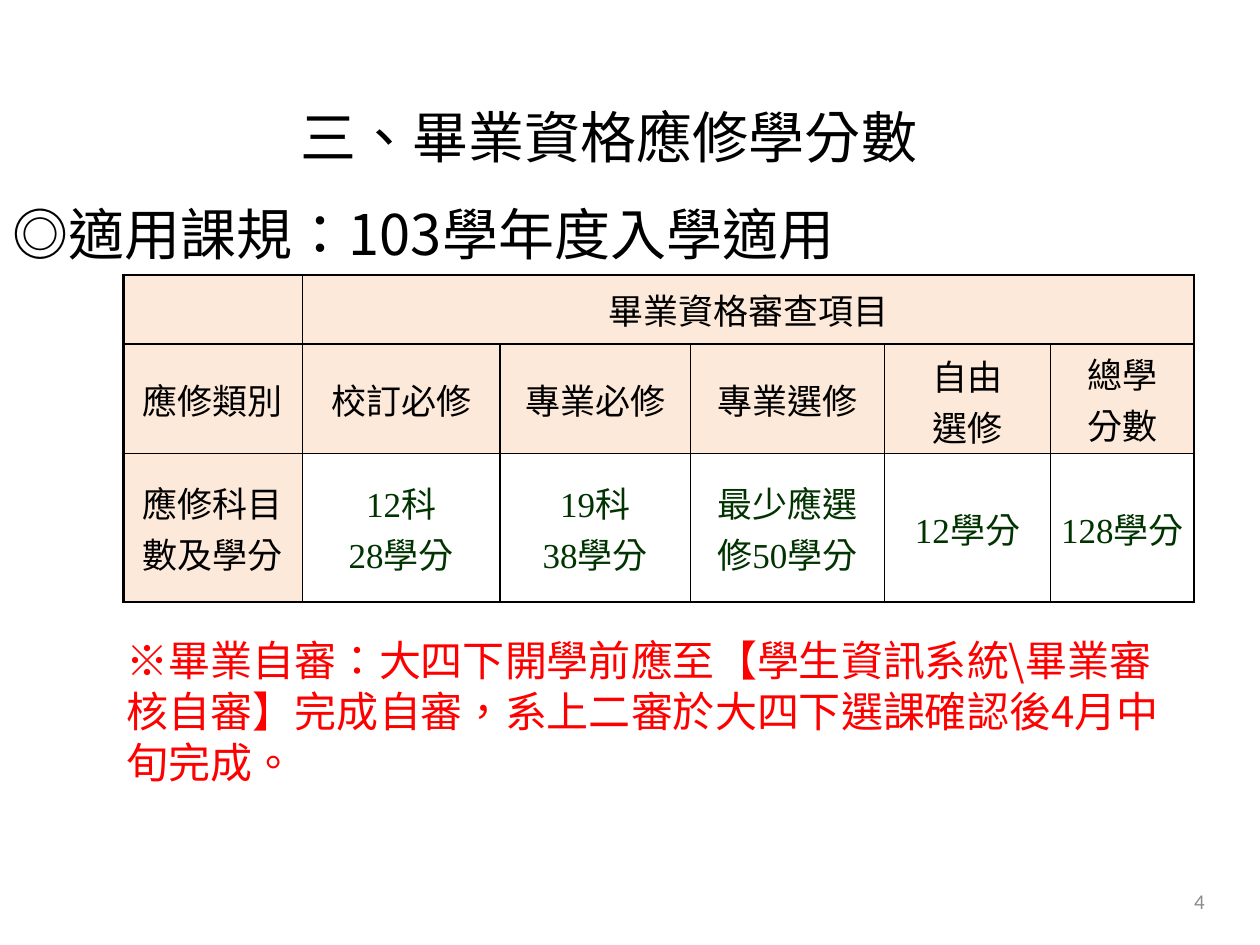
import pptx
import pptx.dml.color
import pptx.enum.text
import pptx.oxml.ns
import pptx.util
from lxml import etree

ALIGN = pptx.enum.text.PP_ALIGN
MIDDLE = pptx.enum.text.MSO_ANCHOR.MIDDLE
COLORS = {"ink": "000000", "header": "FDE9D9", "paper": "FFFFFF",
          "credits": "003300", "notice": "FF0000", "page": "8C8C8C"}
SANS, SANS_JP = "Noto Sans CJK SC", "Noto Sans CJK JP"

# The slide is a grid of 100 columns by 75 rows
SLIDE_W, SLIDE_H = pptx.util.Inches(10), pptx.util.Inches(7.5)
COL, ROW = SLIDE_W / 100, SLIDE_H / 75

COLUMN_WIDTHS = [14.2, 15.7, 15.1, 15.4, 13.2, 11.4]
ROW_HEIGHTS = [5.5, 8.7, 11.8]
CREDIT_ROWS = [
    ["", "畢業資格審查項目", "", "", "", ""],
    ["應修類別", "校訂必修", "專業必修", "專業選修", "自由\n選修", "總學\n分數"],
    ["應修科目數及學分", "12科\n28學分", "19科\n38學分", "最少應選修50學分",
     "12學分", "128學分"],
]


def rgb(name):
    return pptx.dml.color.RGBColor.from_string(COLORS[name])


def place(box):
    left, top, width, height = box
    return [round(n) for n in (left * COL, top * ROW, width * COL, height * ROW)]


def style(paragraph, size, font, color, align, east_asian=SANS):
    paragraph.alignment = align
    for run in paragraph.runs:
        run.font.size = pptx.util.Pt(size)
        run.font.name = font
        run.font.color.rgb = rgb(color)
        properties = run.font._element
        properties.set("lang", "zh-TW")
        ea = etree.SubElement(properties, pptx.oxml.ns.qn("a:ea"))
        ea.set("typeface", east_asian)


def add_text(slide, box, text):
    frame = slide.shapes.add_textbox(*place(box)).text_frame
    frame.word_wrap = True
    frame.vertical_anchor = MIDDLE
    frame.text = text
    return frame.paragraphs


def add_heading(slide, box):
    title, rule = add_text(slide, box, "三、畢業資格應修學分數\n◎適用課規：103學年度入學適用")
    style(title, 32, SANS_JP, "ink", ALIGN.CENTER, SANS_JP)
    style(rule, 32, SANS, "ink", ALIGN.LEFT)
    for line in (title, rule):
        line.line_spacing = pptx.util.Pt(55)


def set_borders(cell, widths):
    properties = cell._tc.get_or_add_tcPr()
    for index, (side, width) in enumerate(widths.items()):
        line = etree.Element(pptx.oxml.ns.qn("a:ln" + side), w=str(pptx.util.Pt(width)))
        fill = etree.SubElement(line, pptx.oxml.ns.qn("a:solidFill"))
        etree.SubElement(fill, pptx.oxml.ns.qn("a:srgbClr"), val=COLORS["ink"])
        properties.insert(index, line)


def add_credit_table(slide, box):
    last_col = len(COLUMN_WIDTHS) - 1
    table = slide.shapes.add_table(len(ROW_HEIGHTS), len(COLUMN_WIDTHS), *place(box)).table
    for column, width in zip(table.columns, COLUMN_WIDTHS):
        column.width = round(width * COL)
    for row, height in zip(table.rows, ROW_HEIGHTS):
        row.height = round(height * ROW)
    table.cell(0, 1).merge(table.cell(0, last_col))

    for r, texts in enumerate(CREDIT_ROWS):
        for c, text in enumerate(texts):
            cell = table.cell(r, c)
            is_header = r < 2 or c == 0
            cell.fill.solid()
            cell.fill.fore_color.rgb = rgb("header" if is_header else "paper")
            cell.vertical_anchor = MIDDLE
            # Outer left, right and top edges are heavier
            reaches_right = c == last_col or (r == 0 and c > 0)
            set_borders(cell, {"L": 1.5 if c == 0 else 1, "R": 1.5 if reaches_right else 1,
                               "T": 1.5 if r == 0 else 1, "B": 1})
            if c == last_col and r > 0:
                cell.margin_left = cell.margin_right = 0
                cell.margin_top = cell.margin_bottom = 0
            if text:
                cell.text_frame.text = text
            for paragraph in cell.text_frame.paragraphs:
                style(paragraph, 20, "Times New Roman",
                      "ink" if is_header else "credits", ALIGN.CENTER)


def add_notice(slide, box):
    notice, = add_text(slide, box, "※畢業自審：大四下開學前應至【學生資訊系統\\畢業審核自審】"
                                   "完成自審，系上二審於大四下選課確認後4月中旬完成。")
    style(notice, 24, SANS, "notice", ALIGN.LEFT)
    notice.line_spacing = pptx.util.Pt(29)


def add_page_number(slide, box):
    number, = add_text(slide, box, "4")
    style(number, 12, "Calibri", "page", ALIGN.RIGHT)


def main():
    deck = pptx.Presentation()
    deck.slide_width, deck.slide_height = SLIDE_W, SLIDE_H
    slide = deck.slides.add_slide(deck.slide_layouts[6])
    add_heading(slide, (0, 5.3, 96.7, 16.4))
    add_notice(slide, (9.1, 50.1, 86.6, 12.6))
    add_credit_table(slide, (9.8, 21.8, sum(COLUMN_WIDTHS), sum(ROW_HEIGHTS)))
    add_page_number(slide, (73.3, 69.5, 23.3, 4))
    deck.save("out.pptx")


if __name__ == "__main__":
    main()
